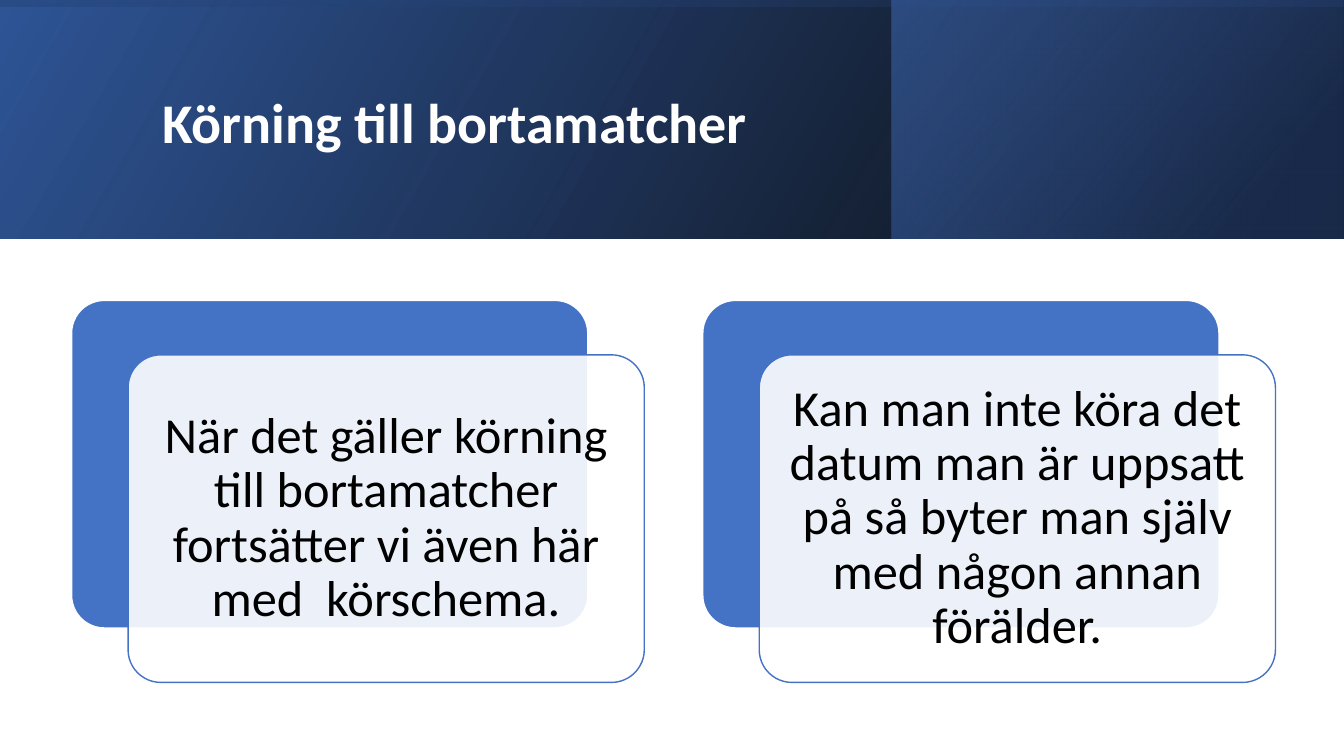
from dataclasses import dataclass

import pptx
import pptx.dml.color
import pptx.enum.shapes
import pptx.enum.text
import pptx.util
from lxml import etree
from pptx.oxml.ns import qn

Inches = pptx.util.Inches
SHAPE = pptx.enum.shapes.MSO_SHAPE
ANCHOR = pptx.enum.text.MSO_ANCHOR
ALIGN = pptx.enum.text.PP_ALIGN


@dataclass(frozen=True)
class Theme:
    font: str = "Calibri"
    title_size: int = 40
    body_size: int = 36
    line_width: int = 1
    white: str = "FFFFFF"
    black: str = "000000"
    blue: str = "4472C4"
    deep_blue: str = "2F5597"
    navy: str = "203864"


THEME = Theme()

# Banner layers: box, rotation, gradient angle (clockwise), stops (position, colour, opacity)
BANNER = [
    ((0, 0, 13.33, 2.37), 0, 330,
     [(0, THEME.black, 96), (100, THEME.deep_blue, 100)]),
    ((8.84, 0, 4.48, 2.37), 0, 320,
     [(19, THEME.navy, 68), (100, THEME.blue, 48)]),
    ((5.48, -5.48, 2.37, 13.33), 270, 350,
     [(23, THEME.deep_blue, 16), (99, THEME.black, 45)]),
]

CARD_TEXTS = [
    "När det gäller körning till bortamatcher fortsätter vi även här med  körschema.",
    "Kan man inte köra det datum man är uppsatt på så byter man själv med någon annan förälder.",
]
CARD_LEFT, CARD_TOP, CARD_PITCH = 0.71, 2.98, 6.26
CARD_W, CARD_H = 5.12, 3.25
FRONT_DX, FRONT_DY = 0.56, 0.54


def rgb(value):
    return pptx.dml.color.RGBColor.from_string(value)


def set_attrs(obj, values):
    for name, value in values.items():
        setattr(obj, name, value)


def set_opacity(fill_element, percent):
    """Add an opacity to the one RGB colour inside the element."""
    if percent < 100:
        clr = next(fill_element.iter(qn("a:srgbClr")))
        etree.SubElement(clr, qn("a:alpha")).set("val", str(percent * 1000))


def add_banner_layer(s, box, rotation, angle, stops):
    sp = s.shapes.add_shape(SHAPE.RECTANGLE, *map(Inches, box))
    sp.shadow.inherit = False
    sp.rotation = rotation
    sp.line.fill.background()
    sp.fill.gradient()
    sp.fill.gradient_angle = 360 - angle
    stop_elements = sp._element.spPr.iter(qn("a:gs"))
    for stop, gs, (position, color, opacity) in zip(
            sp.fill.gradient_stops, list(stop_elements), stops):
        stop.position = position / 100
        stop.color.rgb = rgb(color)
        set_opacity(gs, opacity)
    sp._element.spPr.find(qn("a:xfrm")).set("flipH", "1")


def add_card_layer(s, left, top, fill, line, opacity=100):
    sp = s.shapes.add_shape(SHAPE.ROUNDED_RECTANGLE,
                            *map(Inches, (left, top, CARD_W, CARD_H)))
    sp.shadow.inherit = False
    sp.adjustments[0] = 0.1
    sp.fill.solid()
    sp.fill.fore_color.rgb = rgb(fill)
    set_opacity(sp._element.spPr.find(qn("a:solidFill")), opacity)
    sp.line.color.rgb = rgb(line)
    sp.line.width = pptx.util.Pt(THEME.line_width)
    return sp


def write_text(sp, text, size, color, align, bold=False, inset=None):
    tf = sp.text_frame
    frame = {"word_wrap": True, "vertical_anchor": ANCHOR.MIDDLE}
    if inset is not None:
        for side in ("left", "right", "top", "bottom"):
            frame[f"margin_{side}"] = Inches(inset)
    set_attrs(tf, frame)
    p = tf.paragraphs[0]
    set_attrs(p, {"alignment": align, "line_spacing": 0.9})
    r = p.add_run()
    r.text = text
    set_attrs(r.font, {"name": THEME.font, "size": pptx.util.Pt(size), "bold": bold})
    r.font.color.rgb = rgb(color)


def add_title(s, text):
    sp = s.shapes.add_textbox(*map(Inches, (1.51, 0.38, 10.63, 1.72)))
    write_text(sp, text, THEME.title_size, THEME.white, ALIGN.LEFT, bold=True)


def add_card(s, left, text):
    add_card_layer(s, left, CARD_TOP, THEME.blue, THEME.white)
    front = add_card_layer(s, left + FRONT_DX, CARD_TOP + FRONT_DY,
                           THEME.white, THEME.blue, opacity=90)
    write_text(front, text, THEME.body_size, THEME.black, ALIGN.CENTER, inset=0.15)


def main():
    prs = pptx.Presentation()
    set_attrs(prs, {"slide_width": Inches(13.33), "slide_height": Inches(7.5)})
    s = prs.slides.add_slide(prs.slide_layouts[6])

    # Banner and title
    for layer in BANNER:
        add_banner_layer(s, *layer)
    add_title(s, "Körning till bortamatcher")

    # Cards
    for i, text in enumerate(CARD_TEXTS):
        add_card(s, CARD_LEFT + i * CARD_PITCH, text)

    prs.save("out.pptx")


if __name__ == "__main__":
    main()
